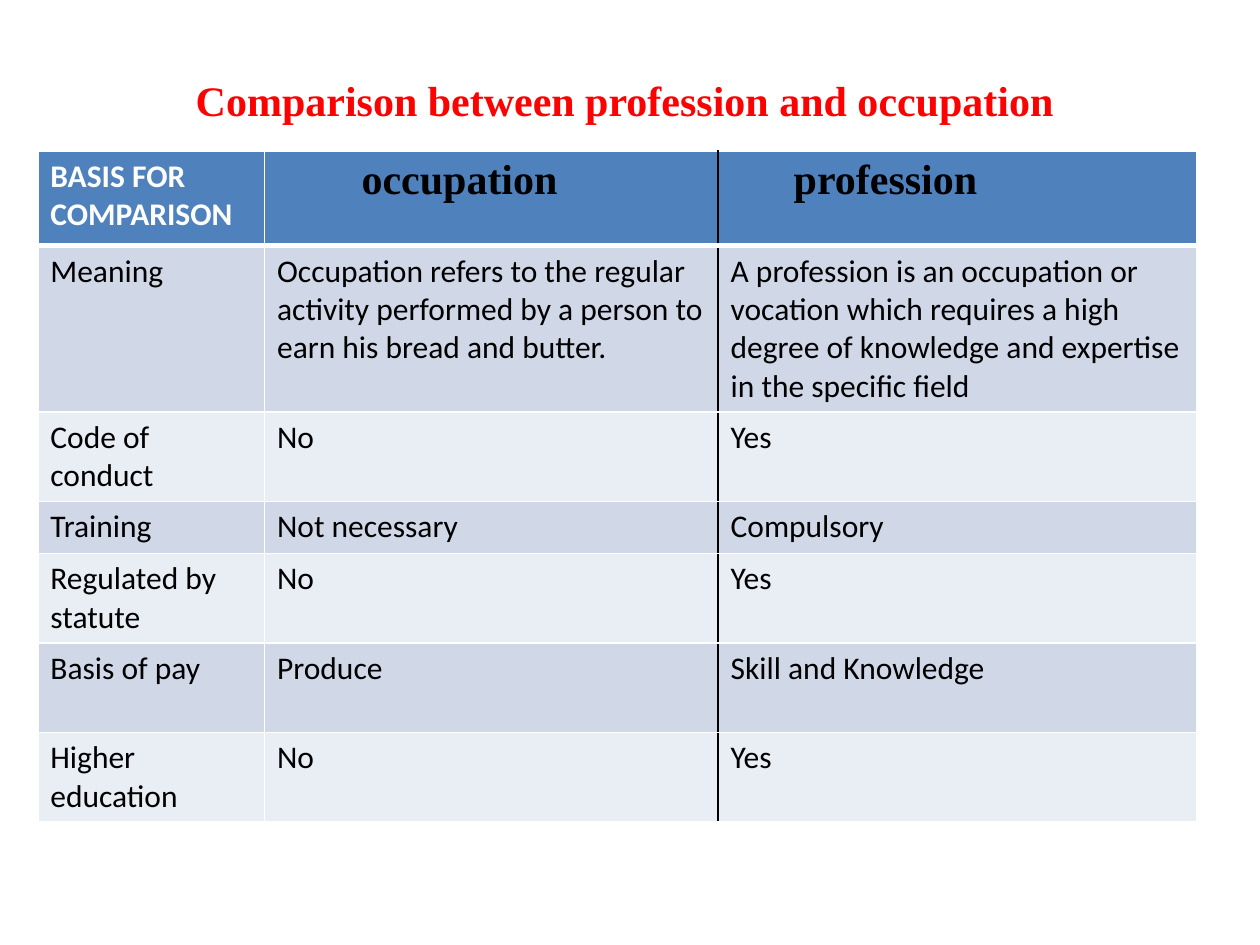
from lxml import etree
from pptx import Presentation
from pptx.dml.color import RGBColor
from pptx.enum.text import MSO_ANCHOR, PP_ALIGN
from pptx.oxml.ns import qn
from pptx.util import Inches, Pt

CENTER = PP_ALIGN.CENTER
MIDDLE = MSO_ANCHOR.MIDDLE
TITLE_ONLY = 5
WIDTH, HEIGHT = 10, 7.5

HEADINGS = ["BASIS FOR COMPARISON", "occupation", "profession"]
COMPARISON = [
    ("Meaning",
     "Occupation refers to the regular activity performed by a person to earn his bread and butter.",
     "A profession is an occupation or vocation which requires a high degree of knowledge "
     "and expertise in the specific field"),
    ("Code of conduct", "No", "Yes"),
    ("Training", "Not necessary", "Compulsory"),
    ("Regulated by statute", "No", "Yes"),
    ("Basis of pay", "Produce", "Skill and Knowledge"),
    ("Higher education", "No", "Yes"),
]
COLUMN_SHARES = [0.18, 0.36, 0.38]
LINES_PER_ROW = [4, 2, 1, 2, 2, 2]
HEADING_INDENTS = [0, 0.67, 0.5]


def color(code):
    """Turn a hex string into a colour."""
    return RGBColor.from_string(code)


class ComparisonSlide:
    """Holds the style and the current slide."""

    body_font, display_font = "Calibri", "Times New Roman"
    body_size, display_size = 18, 24
    black, white, red = "000000", "FFFFFF", "FF0000"
    header_fill, bands = "4F81BD", ("D0D8E8", "E9EDF4")
    line_height, cell_padding, header_height = 0.3, 0.11, 0.75

    def __init__(self, deck):
        """Add a slide with a title placeholder."""
        self.slide = deck.slides.add_slide(deck.slide_layouts[TITLE_ONLY])

    def place(self, left, top, width, height):
        """Turn shares of the slide into lengths."""
        return (Inches(left * WIDTH), Inches(top * HEIGHT),
                Inches(width * WIDTH), Inches(height * HEIGHT))

    def set_text(self, frame, text, font, size, ink, bold):
        """Set one formatted paragraph and return it."""
        frame.text = text
        paragraph = frame.paragraphs[0]
        for run in paragraph.runs:
            run.font.name, run.font.size = font, Pt(size)
            run.font.bold, run.font.color.rgb = bold, color(ink)
        return paragraph

    def title(self, text, *area):
        """Fill and move the title placeholder."""
        heading = self.slide.shapes.title
        heading.left, heading.top, heading.width, heading.height = self.place(*area)
        heading.text_frame.vertical_anchor = MIDDLE
        self.set_text(heading.text_frame, text, self.display_font, self.display_size,
                      self.red, True).alignment = CENTER

    def borders(self, cell, **sides):
        """Draw cell borders given as side=(colour, points)."""
        properties = cell._tc.get_or_add_tcPr()
        for position, side in enumerate("LRTB"):
            ink, points = sides[side]
            line = etree.Element(qn(f"a:ln{side}"), w=str(Pt(points)))
            fill = etree.SubElement(line, qn("a:solidFill"))
            etree.SubElement(fill, qn("a:srgbClr"), val=ink)
            properties.insert(position, line)

    def cell(self, cell, row, column, text):
        """Fill, letter and outline one table cell."""
        header = row == 0
        display = header and column > 0
        cell.fill.solid()
        cell.fill.fore_color.rgb = color(self.header_fill if header else self.bands[(row - 1) % 2])
        paragraph = self.set_text(
            cell.text_frame, text,
            self.display_font if display else self.body_font,
            self.display_size if display else self.body_size,
            self.white if header and not display else self.black, header)
        if display:
            paragraph._p.get_or_add_pPr().set("marL", str(Inches(HEADING_INDENTS[column])))
        thin, divider, thick = (self.white, 1), (self.black, 1), (self.white, 3)
        self.borders(cell,
                     L=divider if column == 2 else thin,
                     R=divider if column == 1 else thin,
                     T=thick if row == 1 else thin,
                     B=thick if header else thin)

    def table(self, records, left, top):
        """Add the table, sizing each row by its lines of text."""
        heights = [self.header_height] + [
            lines * self.line_height + self.cell_padding for lines in LINES_PER_ROW]
        area = self.place(left, top, sum(COLUMN_SHARES), sum(heights) / HEIGHT)
        grid = self.slide.shapes.add_table(len(records), len(COLUMN_SHARES), *area).table
        for column, share in zip(grid.columns, COLUMN_SHARES):
            column.width = Inches(share * WIDTH)
        for row, height in zip(grid.rows, heights):
            row.height = Inches(height)
        for row, record in enumerate(records):
            for column, text in enumerate(record):
                self.cell(grid.cell(row, column), row, column, text)


def main():
    """Build and save the slide."""
    deck = Presentation()
    deck.slide_width, deck.slide_height = Inches(WIDTH), Inches(HEIGHT)
    page = ComparisonSlide(deck)
    page.title("Comparison between profession and occupation ", 0.05, 0.04, 0.9, 0.13)
    page.table([HEADINGS, *COMPARISON], 0.03, 0.16)
    deck.save("out.pptx")


if __name__ == "__main__":
    main()
